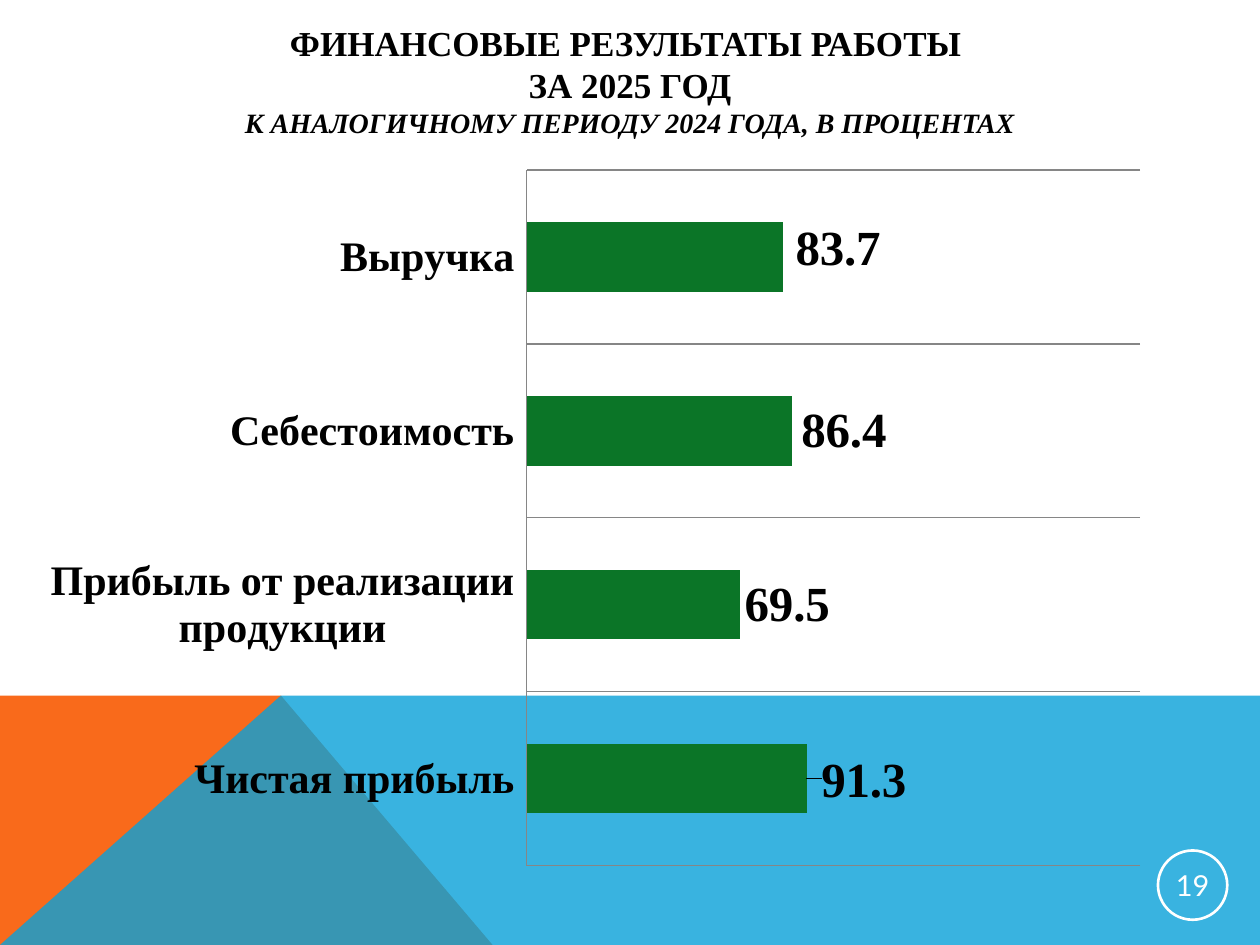
from copy import deepcopy

from lxml.etree import SubElement
from pptx import Presentation
from pptx.chart.data import CategoryChartData
from pptx.dml.color import RGBColor
from pptx.enum.chart import XL_CHART_TYPE, XL_LABEL_POSITION, XL_TICK_LABEL_POSITION, XL_TICK_MARK
from pptx.enum.shapes import MSO_SHAPE
from pptx.enum.text import MSO_ANCHOR, PP_ALIGN
from pptx.oxml import parse_xml
from pptx.oxml.ns import nsdecls, qn
from pptx.util import Inches, Pt

COLORS = {"orange": "F96A1B", "blue": "08A1D9", "green": "0B7527",
          "grid": "868686", "black": "000000", "white": "FFFFFF"}
SERIF = "Times New Roman"
RESULTS = [("Чистая прибыль", 91.3, (0.008, 0.004)),
           ("Прибыль от реализации продукции", 69.5, (0, 0)),
           ("Себестоимость", 86.4, (0.004, 0.001)),
           ("Выручка", 83.7, (0.006, -0.011))]


def rgb(name):
    """Return the named colour."""
    return RGBColor.from_string(COLORS[name])


def style(font, size, color="black", name=SERIF, bold=True, italic=False):
    """Format a font."""
    font.size, font.name, font.bold, font.italic = Pt(size), name, bold, italic
    font.color.rgb = rgb(color)


def layout_xml(**values):
    """Return a manual chart layout element."""
    target = '<c:layoutTarget val="inner"/>' if "w" in values else ""
    modes = '<c:xMode val="edge"/><c:yMode val="edge"/>' if "w" in values else ""
    sizes = "".join(f'<c:{key} val="{value}"/>' for key, value in values.items())
    return parse_xml(f'<c:layout {nsdecls("c")}><c:manualLayout>{target}{modes}{sizes}'
                     "</c:manualLayout></c:layout>")


def add_polygon(s, points, color, opacity=100):
    """Draw a filled outline through points given in inches."""
    start, *rest = [(Inches(x), Inches(y)) for x, y in points]
    builder = s.shapes.build_freeform(*start)
    builder.add_line_segments(rest, close=True)
    sp = builder.convert_to_shape()
    sp.shadow.inherit = False
    sp.fill.solid()
    sp.fill.fore_color.rgb = rgb(color)
    sp.line.fill.background()
    if opacity < 100:
        fill = sp.element.spPr.find(qn("a:solidFill"))[0]
        SubElement(fill, qn("a:alpha"), val=str(opacity * 1000))


def add_backdrop(s, x, y, w, h):
    """Draw the overlapping orange and blue shapes at the foot."""
    peak, bottom = (x + 2.23, y), y + h
    add_polygon(s, [(x, bottom), (x, y), peak, (x + 3.91, bottom)], "orange")
    add_polygon(s, [(x, bottom), peak, (x + w, y), (x + w, bottom)], "blue", 80)


def add_title(s, x, y, w, h):
    """Fill and place the title placeholder."""
    sp = s.shapes.title
    sp.left, sp.top, sp.width, sp.height = map(Inches, (x, y, w, h))
    sp.fill.solid()
    sp.fill.fore_color.rgb = rgb("white")
    tf = sp.text_frame
    tf.vertical_anchor = MSO_ANCHOR.MIDDLE
    tf.text = ("ФИНАНСОВЫЕ РЕЗУЛЬТАТЫ РАБОТЫ \vЗА 2025 ГОД\v"
               "К АНАЛОГИЧНОМУ ПЕРИОДУ 2024 ГОДА, В ПРОЦЕНТАХ")
    p = tf.paragraphs[0]
    p.alignment = PP_ALIGN.CENTER
    for r, size in zip(p.runs, (20, 20, 16)):
        style(r.font, size, italic=size == 16)
    for br in p._p.findall(qn("a:br")):
        br.append(deepcopy(p.runs[0].font._element))


def add_results_chart(s, x, y, w, h):
    """Add the bar chart of results as percentages of the year before."""
    data = CategoryChartData(number_format="0.0")
    data.categories = [name for name, _, _ in RESULTS]
    data.add_series("Series 1", [value for _, value, _ in RESULTS])
    chart = s.shapes.add_chart(XL_CHART_TYPE.BAR_CLUSTERED,
                               *map(Inches, (x, y, w, h)), data).chart
    chart.has_legend = chart.has_title = False
    style(chart.font, 28)

    plot = chart.plots[0]
    plot.gap_width, plot.overlap, plot.vary_by_categories = 150, -25, False
    area = chart._chartSpace.chart.plotArea
    for old in area.findall(qn("c:layout")):
        area.remove(old)
    area.insert(0, layout_xml(x=0.416, y=0.012, w=0.505, h=0.942))

    values = chart.value_axis
    values.minimum_scale, values.maximum_scale = 0, 200
    values.has_major_gridlines = values.visible = False
    names = chart.category_axis
    names.major_tick_mark = names.minor_tick_mark = XL_TICK_MARK.NONE
    names.tick_label_position = XL_TICK_LABEL_POSITION.LOW
    names.has_major_gridlines = True
    style(names.tick_labels.font, 24)
    for line in (names.format.line, names.major_gridlines.format.line):
        line.color.rgb = rgb("grid")
        line.width = Pt(0.75)

    series = plot.series[0]
    series.format.fill.solid()
    series.format.fill.fore_color.rgb = rgb("green")
    labels = series.data_labels
    labels.show_value = True
    labels.number_format, labels.number_format_is_linked = "0.0", False
    labels.position = XL_LABEL_POSITION.OUTSIDE_END
    style(labels.font, 28)
    for i, (_, _, (dx, dy)) in enumerate(RESULTS):
        label = series.points[i].data_label
        style(label.font, 28)
        label.position = XL_LABEL_POSITION.OUTSIDE_END
    for mark, (_, _, (dx, dy)) in zip(series._element.iter(qn("c:dLbl")), RESULTS):
        mark.insert(1, layout_xml(x=dx, y=dy))


def add_page_number(s, x, y, size):
    """Draw the ringed page number."""
    sp = s.shapes.add_shape(MSO_SHAPE.OVAL, *map(Inches, (x, y, size, size)))
    sp.shadow.inherit = False
    sp.fill.background()
    sp.line.color.rgb = rgb("white")
    sp.line.width = Pt(1.5)
    tf = sp.text_frame
    tf.margin_left = tf.margin_right = tf.margin_top = tf.margin_bottom = Inches(0.01)
    tf.vertical_anchor = MSO_ANCHOR.MIDDLE
    tf.text = "19"
    p = tf.paragraphs[0]
    p.alignment = PP_ALIGN.CENTER
    style(p.runs[0].font, 16.5, "white", "Lato", bold=False)


def main():
    """Build the slide and save it."""
    prs = Presentation()
    prs.slide_width, prs.slide_height = Inches(10), Inches(7.5)
    s = prs.slides.add_slide(prs.slide_layouts[5])
    add_backdrop(s, 0, 5.52, 10, 1.98)
    add_title(s, 0.5, 0.13, 9, 1.02)
    add_results_chart(s, 0.17, 1.28, 9.64, 5.86)
    add_page_number(s, 9.19, 6.75, 0.55)
    prs.save("out.pptx")


if __name__ == "__main__":
    main()
